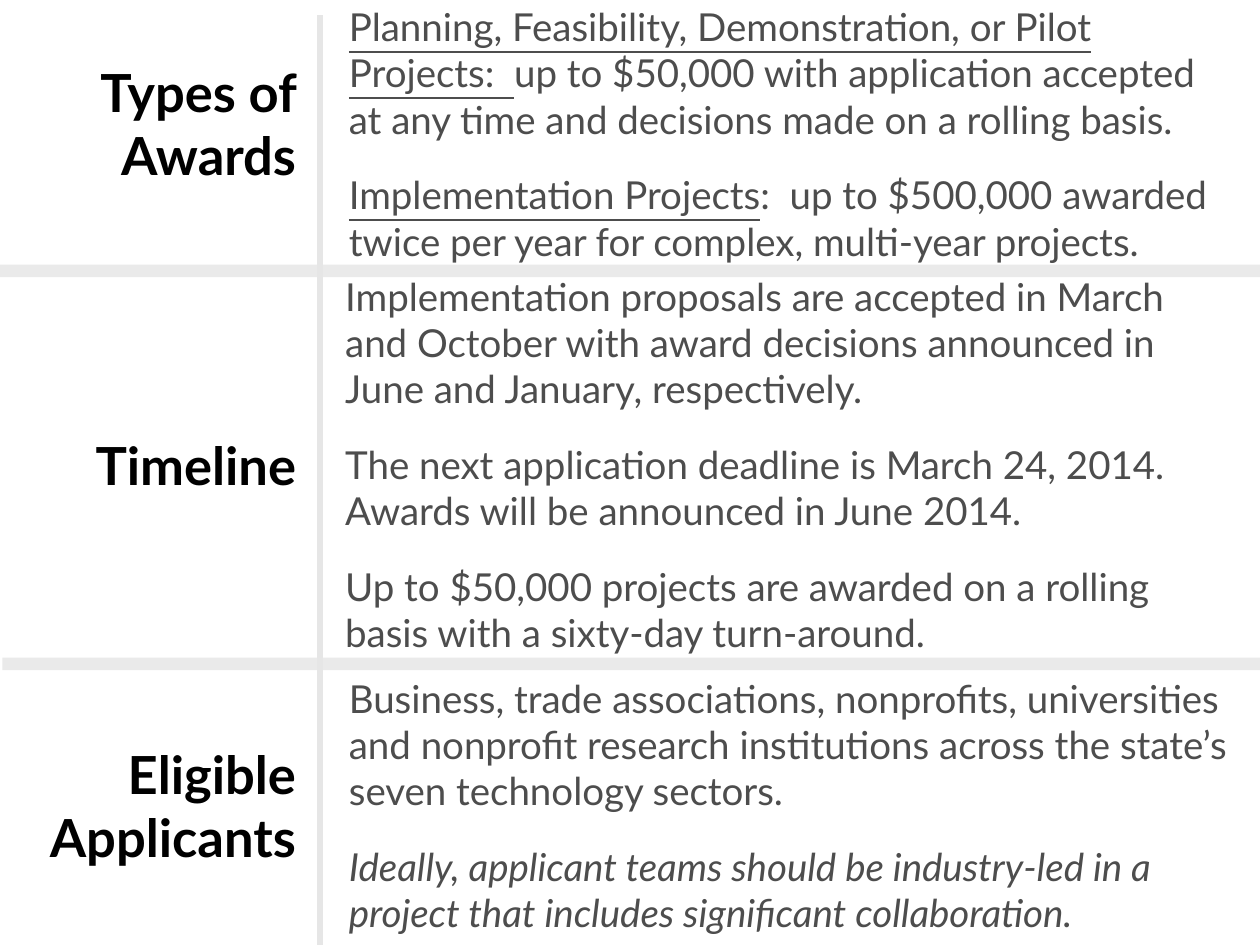
from pptx import Presentation
from pptx import util as u
from pptx.dml import color
from pptx.enum import shapes, text
from pptx.oxml import ns
from lxml import etree

HEAD = dict(name="Lato", size=u.Pt(30), bold=True)
BODY = dict(name="Lato", size=u.Pt(22))
LINE = dict(underline=True)
TILT = dict(italic=True)

HEADS = [
    ("Types of Awards", (14.4, 53.3, 154.8, 34.5)),
    ("Timeline", (14.4, 236.9, 154.8, 56.9)),
    ("Eligible Applicants", (-44.6, 432, 213.8, 56.2)),
]
NOTES = [
    ((199.4, 1.4, 506.2, 149.8), [
        [("Planning, Feasibility, Demonstration, or Pilot Projects:  ", LINE),
         ("up to $50,000 with application accepted at any time and decisions "
          "made on a rolling basis.", {})],
        [("Implementation Projects", LINE),
         (":  up to $500,000 awarded twice per year for complex, "
          "multi-year projects.", {})],
    ]),
    ((197.3, 170.6, 506.2, 189.4), [
        [("Implementation proposals are accepted in March and October with award "
          "decisions announced in June and January, respectively.", {})],
        [("The next application deadline is March 24, 2014.  Awards will be "
          "announced in June 2014.", {})],
        [("Up to $50,000 projects are awarded on a rolling basis with a "
          "sixty-day turn-around.", {})],
    ]),
    ((199.4, 421.2, 506.2, 77.8), [
        [("Business, trade associations, nonprofits, universities and nonprofit "
          "research institutions across the state’s seven technology sectors.", {})],
        [("Ideally, applicant teams should be industry-led in a project that "
          "includes significant collaboration.", TILT)],
    ]),
]


def tint(code):
    return color.RGBColor.from_string(code)


def put(item, vals):
    for key, val in vals.items():
        setattr(item, key, val)


class Board:
    """Holds the style and the current slide, and draws each kind of element."""

    def __init__(self, deck):
        self.slide = deck.slides.add_slide(deck.slide_layouts[6])
        self.black, self.gray, self.dark, self.pale = "000000", "4D4D4D", "343434", "E6E6E6"
        self.gap = u.Pt(16.9)
        self.frame = dict(word_wrap=True, margin_left=0, margin_right=0, margin_top=0,
                          margin_bottom=0, vertical_anchor=text.MSO_ANCHOR.MIDDLE)

    def label(self, area, paras, font, code, align):
        box = self.slide.shapes.add_textbox(*map(u.Pt, area)).text_frame
        put(box, self.frame)
        for i, runs in enumerate(paras):
            para = box.add_paragraph() if i else box.paragraphs[0]
            put(para, dict(alignment=align, space_before=self.gap if i else u.Pt(0)))
            for words, extra in runs:
                run = para.add_run()
                run.text = words
                put(run.font, {**font, **extra})
                run.font.color.rgb = tint(code)

    def head(self, words, area):
        self.label(area, [[(words, {})]], HEAD, self.black, text.PP_ALIGN.RIGHT)

    def note(self, area, paras):
        self.label(area, paras, BODY, self.gray, text.PP_ALIGN.LEFT)

    def bar(self, left, top):
        area = map(u.Pt, (left, top, 720, 7.2))
        bar = self.slide.shapes.add_shape(shapes.MSO_SHAPE.RECTANGLE, *area)
        bar.shadow.inherit = False
        bar.line.fill.background()
        bar.fill.solid()
        bar.fill.fore_color.rgb = tint(self.dark)
        tone = bar._element.spPr.find(".//" + ns.qn("a:srgbClr"))
        etree.SubElement(tone, ns.qn("a:alpha"), val="10000")

    def rule(self, left, top, end):
        ends = map(u.Pt, (left, top, left, end))
        rule = self.slide.shapes.add_connector(shapes.MSO_CONNECTOR.STRAIGHT, *ends)
        rule.line.color.rgb = tint(self.pale)
        rule.line.width = u.Pt(3)
        etree.SubElement(rule._element.spPr, ns.qn("a:effectLst"))


def main():
    deck = Presentation()
    put(deck, dict(slide_width=u.Pt(720), slide_height=u.Pt(540)))
    board = Board(deck)
    for words, area in HEADS:
        board.head(words, area)
    for area, paras in NOTES:
        board.note(area, paras)
    for left, top in ((0, 151.2), (1.4, 375.8)):
        board.bar(left, top)
    board.rule(182.9, 8.6, 540)
    deck.save("out.pptx")


if __name__ == "__main__":
    main()
